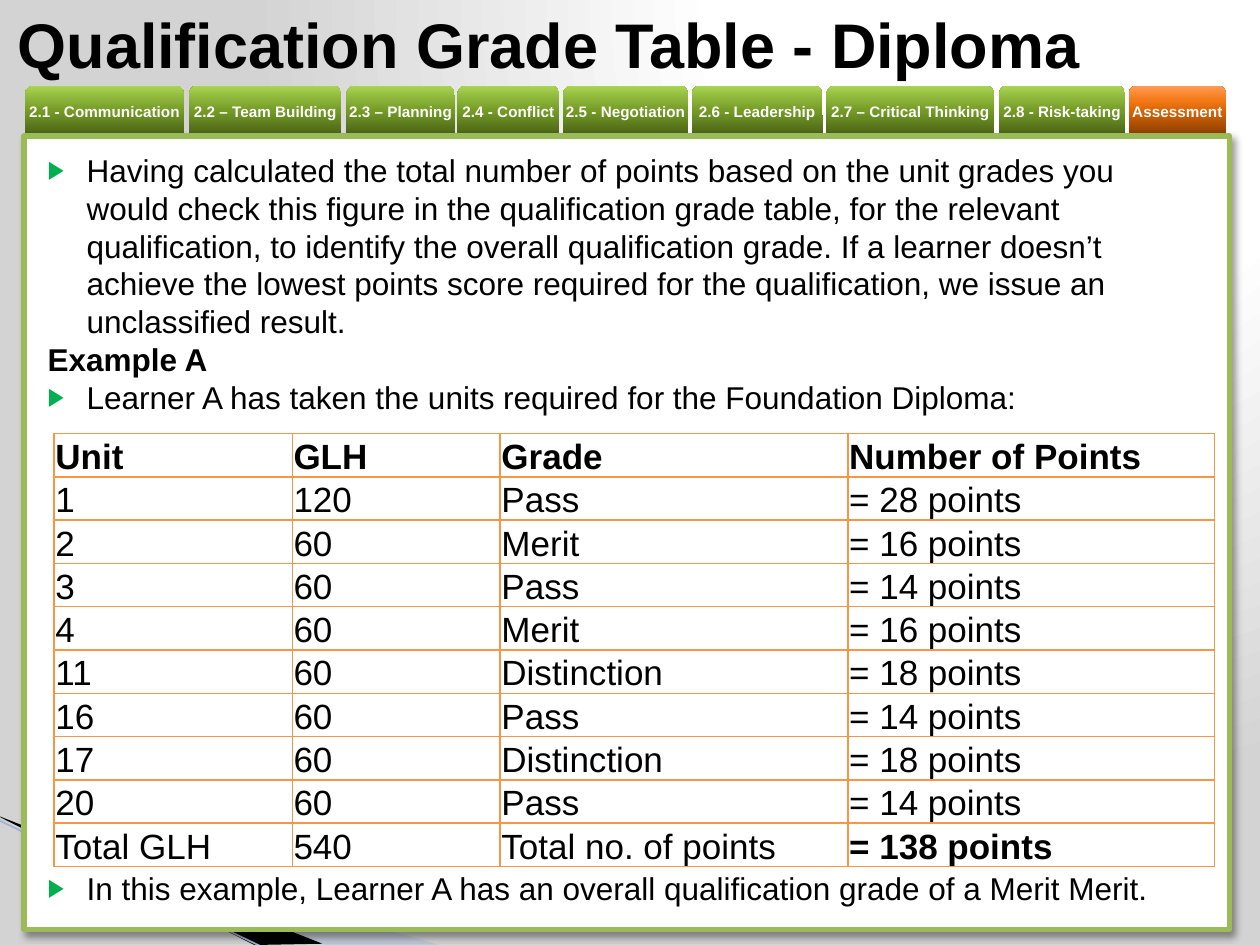
from dataclasses import dataclass

from lxml.etree import SubElement
from pptx import Presentation
from pptx.dml.color import RGBColor
from pptx.enum.shapes import MSO_CONNECTOR, MSO_SHAPE
from pptx.enum.text import MSO_ANCHOR, MSO_AUTO_SIZE, PP_ALIGN
from pptx.oxml import parse_xml
from pptx.oxml.ns import nsdecls, qn
from pptx.util import Inches, Pt

FONT = "Arial"
BLACK, WHITE = "000000", "FFFFFF"
GREEN, ORANGE, BULLET_GREEN = "9BBB59", "F79646", "00B050"
GREEN_STOPS = [(0, "4A6316"), (50, "769C27"), (70, "89B137"), (100, "A9D651")]
ORANGE_STOPS = [(0, "8B3F00"), (50, "DA6606"), (70, "F47917"), (100, "FF9C54")]
BACKGROUND_STOPS = [(0, WHITE), (40, WHITE), (100, "D3D3D3")]
UPWARD = '<a:lin ang="16200000" scaled="0"/>'
CIRCULAR = '<a:path path="circle"><a:fillToRect l="65000" b="98000"/></a:path>'


@dataclass
class Tab:
    label: str
    left: float
    width: float
    stops: list


@dataclass
class BodyLine:
    text: str
    bulleted: bool = True
    space_before: float = 0


TABS = [
    Tab("2.1 - Communication", 0.2, 1.26, GREEN_STOPS),
    Tab("2.2 – Team Building", 1.5, 1.21, GREEN_STOPS),
    Tab("2.3 – Planning", 2.75, 0.86, GREEN_STOPS),
    Tab("2.4 - Conflict", 3.63, 0.81, GREEN_STOPS),
    Tab("2.5 - Negotiation", 4.47, 0.99, GREEN_STOPS),
    Tab("2.6 - Leadership", 5.49, 1.04, GREEN_STOPS),
    Tab("2.7 – Critical Thinking", 6.56, 1.33, GREEN_STOPS),
    Tab("2.8 - Risk-taking", 7.93, 1, GREEN_STOPS),
    Tab("Assessment", 8.96, 0.77, ORANGE_STOPS),
]
BODY = [
    BodyLine("Having calculated the total number of points based on the unit grades you "
             "would check this figure in the qualification grade table, for the relevant "
             "qualification, to identify the overall qualification grade. If a learner "
             "doesn’t achieve the lowest points score required for the qualification, "
             "we issue an unclassified result."),
    BodyLine("Example A", bulleted=False),
    BodyLine("Learner A has taken the units required for the Foundation Diploma:"),
    BodyLine("In this example, Learner A has an overall qualification grade of a "
             "Merit Merit.", space_before=259),
]
COLUMN_WIDTHS = [1.89, 1.65, 2.76, 2.91]
ROW_HEIGHT = 0.344
ROWS = [
    ("Unit", "GLH", "Grade", "Number of Points"),
    ("1", "120", "Pass", "= 28 points"),
    ("2", "60", "Merit", "= 16 points"),
    ("3", "60", "Pass", "= 14 points"),
    ("4", "60", "Merit", "= 16 points"),
    ("11", "60", "Distinction", "= 18 points"),
    ("16", "60", "Pass", "= 14 points"),
    ("17", "60", "Distinction", "= 18 points"),
    ("20", "60", "Pass", "= 14 points"),
    ("Total GLH", "540", "Total no. of points", "= 138 points"),
]


def rgb(color: str) -> RGBColor:
    return RGBColor.from_string(color)


def gradient(stops: list, direction: str):
    marks = "".join(f'<a:gs pos="{position * 1000}"><a:srgbClr val="{color}"/></a:gs>'
                    for position, color in stops)
    return parse_xml(f'<a:gradFill {nsdecls("a")} rotWithShape="1">'
                     f'<a:gsLst>{marks}</a:gsLst>{direction}</a:gradFill>')


def add_text(paragraph, text: str, size: float, color: str = BLACK, bold: bool = False) -> None:
    run = paragraph.add_run()
    run.text = text
    run.font.name, run.font.size, run.font.bold = FONT, Pt(size), bold
    run.font.color.rgb = rgb(color)


def set_background(slide) -> None:
    slide.background.fill.solid()
    properties = slide._element.cSld.find(qn("p:bg")).find(qn("p:bgPr"))
    properties.replace(properties.find(qn("a:solidFill")),
                       gradient(BACKGROUND_STOPS, CIRCULAR))


def add_sliver(slide, points: list, color: str, alpha: int = 100) -> None:
    """Draw one thin filled wedge of the corner decoration."""
    corners = [(Inches(x), Inches(y)) for x, y in points]
    builder = slide.shapes.build_freeform(*corners[0])
    builder.add_line_segments(corners[1:], close=True)
    shape = builder.convert_to_shape()
    shape.shadow.inherit = False
    shape.fill.solid()
    shape.fill.fore_color.rgb = rgb(color)
    shape.line.fill.background()
    if alpha < 100:
        fill_color = shape._element.spPr.find(qn("a:solidFill"))[0]
        SubElement(fill_color, qn("a:alpha"), val=str(alpha * 1000))


def add_corner(slide) -> None:
    add_sliver(slide, [(-0.01, 6.5), (3.49, 7.5), (2.59, 7.5), (-0.01, 6.49)], "A7B9DB", 40)
    add_sliver(slide, [(0, 6.48), (2.56, 7.49), (2.02, 7.5), (0.01, 6.49)], BLACK)
    edge = slide.shapes.add_connector(MSO_CONNECTOR.STRAIGHT, Inches(-0.01), Inches(6.51),
                                      Inches(2.09), Inches(7.52))
    edge.line.color.rgb = rgb("9EB3D6")
    edge.line.width = Pt(0.95)
    SubElement(edge._element.spPr, qn("a:effectLst"))


def add_tab(slide, tab: Tab) -> None:
    shape = slide.shapes.add_shape(MSO_SHAPE.ROUND_2_SAME_RECTANGLE, Inches(tab.left),
                                   Inches(0.68), Inches(tab.width), Inches(0.39))
    shape.shadow.inherit = False
    shape.line.fill.background()
    shape._element.spPr.find(qn("a:prstGeom")).addnext(gradient(tab.stops, UPWARD))
    frame = shape.text_frame
    frame.margin_left = frame.margin_right = frame.margin_top = frame.margin_bottom = 0
    frame.vertical_anchor = MSO_ANCHOR.MIDDLE
    frame.paragraphs[0].alignment = PP_ALIGN.CENTER
    add_text(frame.paragraphs[0], tab.label, 8.7, WHITE, bold=True)


def add_panel(slide) -> None:
    panel = slide.shapes.add_shape(MSO_SHAPE.RECTANGLE, Inches(0.19), Inches(1.08),
                                   Inches(9.57), Inches(6.3))
    panel.shadow.inherit = False
    panel.fill.solid()
    panel.fill.fore_color.rgb = rgb(WHITE)
    panel.line.color.rgb = rgb(GREEN)
    panel.line.width = Pt(3)
    effects = panel._element.spPr.find(qn("a:effectLst"))
    effects.append(parse_xml(
        f'<a:outerShdw {nsdecls("a")} blurRad="{Pt(4)}" dist="{Pt(3)}" dir="2700000" '
        f'algn="tl" rotWithShape="0"><a:srgbClr val="{BLACK}"><a:alpha val="40000"/>'
        '</a:srgbClr></a:outerShdw>'))


def add_bullet(paragraph) -> None:
    properties = paragraph._p.get_or_add_pPr()
    properties.set("marL", str(Inches(0.31)))
    properties.set("indent", str(Inches(-0.31)))
    color = SubElement(properties, qn("a:buClr"))
    SubElement(color, qn("a:srgbClr"), val=BULLET_GREEN)
    SubElement(properties, qn("a:buSzPct"), val="80000")
    SubElement(properties, qn("a:buFont"), typeface=FONT)
    SubElement(properties, qn("a:buChar"), char="▶")


def add_body(slide) -> None:
    frame = slide.shapes.add_textbox(Inches(0.28), Inches(1.15), Inches(9.37),
                                     Inches(6.16)).text_frame
    frame.word_wrap = True
    for index, line in enumerate(BODY):
        paragraph = frame.add_paragraph() if index else frame.paragraphs[0]
        if line.bulleted:
            add_bullet(paragraph)
        if line.space_before:
            paragraph.space_before = Pt(line.space_before)
        add_text(paragraph, line.text, 18, bold=not line.bulleted)


def fill_cell(cell, text: str, bold: bool) -> None:
    cell.margin_left = cell.margin_right = cell.margin_top = Inches(0.01)
    cell.margin_bottom = 0
    cell.vertical_anchor = MSO_ANCHOR.BOTTOM
    add_text(cell.text_frame.paragraphs[0], text, 20, bold=bold)
    properties = cell._tc.get_or_add_tcPr()
    for side in ("lnL", "lnR", "lnT", "lnB"):
        border = SubElement(properties, qn(f"a:{side}"), w=str(Pt(1)))
        SubElement(SubElement(border, qn("a:solidFill")), qn("a:srgbClr"), val=ORANGE)
    cell.fill.background()


def add_points_table(slide) -> None:
    table = slide.shapes.add_table(
        len(ROWS), len(COLUMN_WIDTHS), Inches(0.43), Inches(3.44),
        Inches(sum(COLUMN_WIDTHS)), Inches(ROW_HEIGHT * len(ROWS))).table
    table.first_row = table.horz_banding = False
    for column, width in zip(table.columns, COLUMN_WIDTHS):
        column.width = Inches(width)
    for row, texts in zip(table.rows, ROWS):
        row.height = Inches(ROW_HEIGHT)
        for cell, text in zip(row.cells, texts):
            fill_cell(cell, text, bold=texts is ROWS[0] or text == ROWS[-1][-1])


def set_title(slide) -> None:
    title = slide.shapes.title
    title.left, title.top, title.width, title.height = (
        Inches(0.04), Inches(0), Inches(9.61), Inches(0.68))
    frame = title.text_frame
    frame.auto_size = MSO_AUTO_SIZE.NONE
    frame.vertical_anchor = MSO_ANCHOR.MIDDLE
    frame.paragraphs[0].alignment = PP_ALIGN.LEFT
    add_text(frame.paragraphs[0], "Qualification Grade Table - Diploma", 36, bold=True)


def main() -> None:
    presentation = Presentation()
    presentation.slide_width, presentation.slide_height = Inches(10), Inches(7.5)
    slide = presentation.slides.add_slide(presentation.slide_layouts[5])
    set_background(slide)
    set_title(slide)
    add_corner(slide)
    for tab in TABS:
        add_tab(slide, tab)
    add_panel(slide)
    add_body(slide)
    add_points_table(slide)
    presentation.save("out.pptx")


if __name__ == "__main__":
    main()
